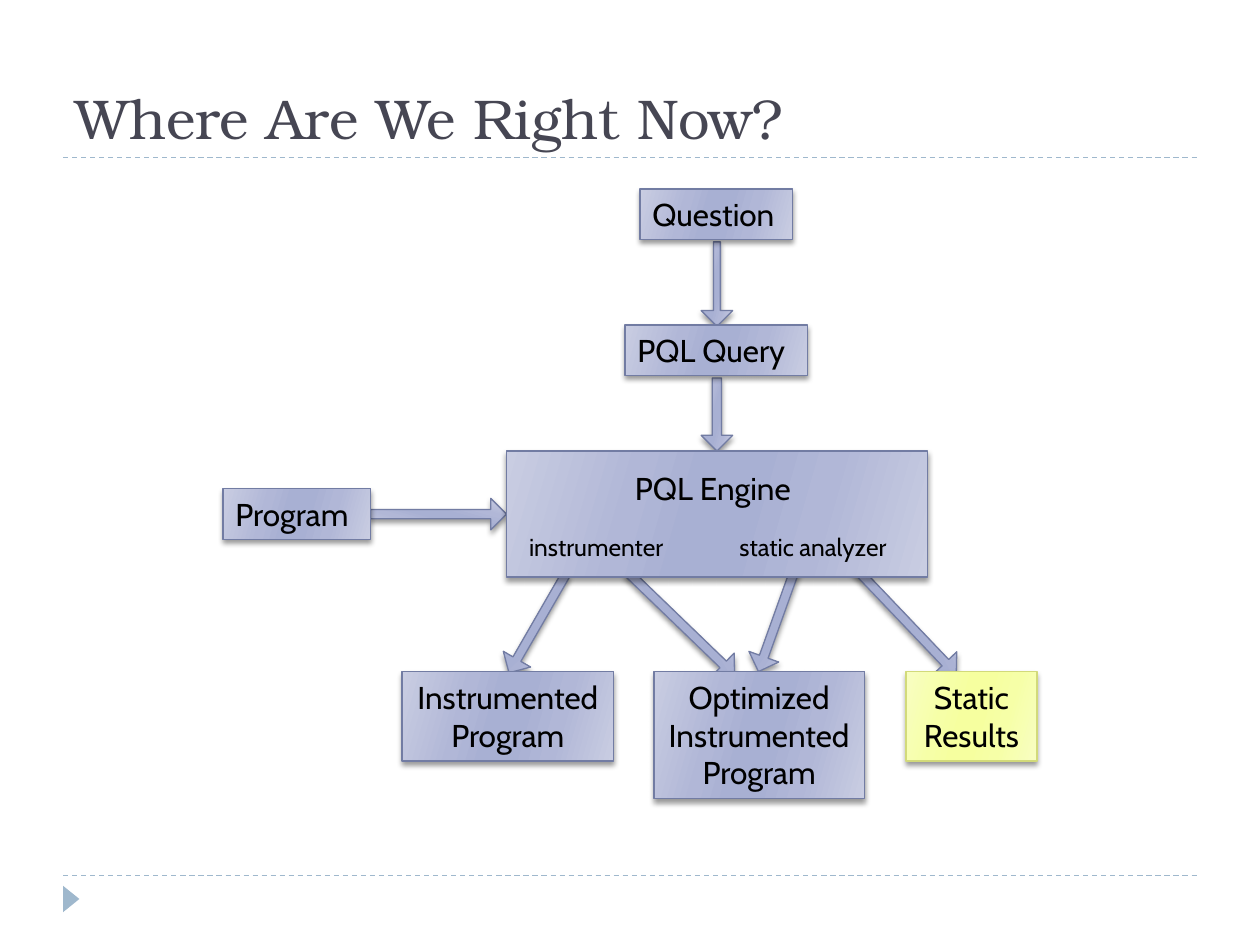
from math import atan2, degrees, hypot

from lxml.etree import SubElement
from pptx import Presentation
from pptx.dml.color import RGBColor
from pptx.enum.dml import MSO_LINE_DASH_STYLE as DASH
from pptx.enum.shapes import MSO_CONNECTOR, MSO_SHAPE
from pptx.enum.text import MSO_ANCHOR, PP_ALIGN
from pptx.oxml.ns import qn
from pptx.util import Inches, Pt

COLORS = {"title": "464653", "text": "000000", "accent": "9FB8CD", "shadow": "000000"}
BLUE = {"line": "727CA3", "edge": "C9CDE2", "mid": "B1B7D7", "core": "A8B0D3"}
YELLOW = {"line": "D2DA7A", "edge": "F8FEC2", "mid": "F6FFA7", "core": "F6FF9F"}
STOPS = [(0, "edge"), (30, "mid"), (45, "core"), (55, "core"), (73, "mid"), (100, "edge")]
TITLE_FONT, BODY_FONT = "TeX Gyre Bonum", "Cabin"
ARROW_W = 0.25


def rgb(value):
    """Turn a hex string into a colour."""
    return RGBColor.from_string(value)


def add_color(parent, value):
    """Add a hex colour element below an XML parent."""
    return SubElement(parent, qn("a:srgbClr"), val=value)


def style(sp, palette):
    """Give a shape the gradient, outline and soft shadow of a palette."""
    sp.fill.gradient()
    sp.fill.gradient_angle = 344
    stops = sp._element.spPr.find(".//" + qn("a:gsLst"))
    for stop in list(stops):
        stops.remove(stop)
    for pos, tone in STOPS:
        add_color(SubElement(stops, qn("a:gs"), pos=str(pos * 1000)), palette[tone])
    sp.line.color.rgb = rgb(palette["line"])
    sp.line.width = Pt(0.75)
    sp.shadow.inherit = False
    effects = sp._element.spPr.find(qn("a:effectLst"))
    shadow = SubElement(effects, qn("a:outerShdw"), blurRad=str(Pt(3)), dist=str(Pt(2)),
                        dir="5400000", rotWithShape="0")
    SubElement(add_color(shadow, COLORS["shadow"]), qn("a:alpha"), val="40000")


def write(sp, lines, size=18, align=PP_ALIGN.LEFT):
    """Write one paragraph for each line of text."""
    tf = sp.text_frame
    tf.word_wrap = False
    tf.vertical_anchor = MSO_ANCHOR.TOP
    for i, line in enumerate(lines):
        p = tf.add_paragraph() if i else tf.paragraphs[0]
        p.alignment = align
        r = p.add_run()
        r.text = line
        r.font.size = Pt(size)
        r.font.name = BODY_FONT
        r.font.color.rgb = rgb(COLORS["text"])


def add_box(slide, box, lines=(), palette=BLUE):
    """Add a gradient box, centring text of several lines."""
    sp = slide.shapes.add_shape(MSO_SHAPE.RECTANGLE, *map(Inches, box))
    style(sp, palette)
    write(sp, lines, align=PP_ALIGN.CENTER if len(lines) > 1 else PP_ALIGN.LEFT)


def add_label(slide, box, text, size):
    """Add a plain text label."""
    write(slide.shapes.add_textbox(*map(Inches, box)), [text], size)


def add_arrow(slide, tail, tip, shaft=0.29):
    """Add a block arrow running from tail to tip."""
    (x1, y1), (x2, y2) = tail, tip
    length = hypot(x2 - x1, y2 - y1)
    left, top = (x1 + x2 - ARROW_W) / 2, (y1 + y2 - length) / 2
    sp = slide.shapes.add_shape(MSO_SHAPE.DOWN_ARROW, Inches(left), Inches(top),
                                Inches(ARROW_W), Inches(length))
    sp.adjustments[0] = shaft
    sp.rotation = degrees(atan2(x1 - x2, y2 - y1)) % 360
    style(sp, BLUE)


def add_frame(slide, left, right, rules):
    """Add the dashed rules and the corner triangle."""
    for y in rules:
        rule = slide.shapes.add_connector(MSO_CONNECTOR.STRAIGHT, Inches(left), Inches(y),
                                          Inches(right), Inches(y))
        rule.line.color.rgb = rgb(COLORS["accent"])
        rule.line.width = Pt(0.75)
        rule.line.dash_style = DASH.DASH
        SubElement(rule._element.spPr, qn("a:effectLst"))
    marker = slide.shapes.add_shape(MSO_SHAPE.ISOSCELES_TRIANGLE, Inches(left - 0.04),
                                    Inches(rules[-1] + 0.12), Inches(0.21), Inches(0.13))
    marker.rotation = 90
    marker.fill.solid()
    marker.fill.fore_color.rgb = rgb(COLORS["accent"])
    marker.line.fill.background()
    marker.shadow.inherit = False


def add_title(slide, box, text):
    """Place and fill the title placeholder."""
    title = slide.shapes.title
    title.left, title.top, title.width, title.height = map(Inches, box)
    title.text_frame.vertical_anchor = MSO_ANCHOR.BOTTOM
    p = title.text_frame.paragraphs[0]
    p.alignment = PP_ALIGN.LEFT
    r = p.add_run()
    r.text = text
    r.font.size = Pt(32)
    r.font.name = TITLE_FONT
    r.font.color.rgb = rgb(COLORS["title"])


def add_inputs(slide, engine):
    """Add the boxes and arrows that lead into the engine."""
    left, top, width, height = engine
    mid_x, mid_y = left + width / 2, top + height / 2
    add_arrow(slide, (mid_x, 1.92), (mid_x, 2.59), shaft=0.22)
    add_arrow(slide, (mid_x, 3), (mid_x, top))
    add_arrow(slide, (2.94, mid_y), (left, mid_y))
    add_box(slide, (mid_x - 0.61, 1.5, 1.21, 0.4), ["Question"])
    add_box(slide, (mid_x - 0.73, 2.58, 1.45, 0.4), ["PQL Query"])
    add_box(slide, (1.77, mid_y - 0.2, 1.17, 0.4), ["Program"])


def add_engine(slide, box):
    """Add the engine box and the names of its parts."""
    left, top = box[:2]
    add_box(slide, box)
    add_label(slide, (left + 0.08, top + 0.59, 1.29, 0.34), "instrumenter", 14)
    add_label(slide, (left + 1.75, top + 0.59, 1.5, 0.34), "static analyzer", 14)
    add_label(slide, (left + 0.92, top + 0.09, 1.55, 0.4), "PQL Engine", 18)


def add_output_arrows(slide):
    """Add the arrows that fan out below the engine."""
    for tail, tip in [((4.49, 4.56), (4.04, 5.34)), ((6.78, 4.5), (7.59, 5.35)),
                      ((4.98, 4.54), (5.83, 5.36)), ((6.31, 4.52), (6.02, 5.33))]:
        add_arrow(slide, tail, tip)


def add_outputs(slide, top):
    """Add the row of result boxes."""
    add_box(slide, (3.19, top, 1.68, 0.71), ["Instrumented", "Program"])
    add_box(slide, (5.19, top, 1.67, 1.01), ["Optimized", "Instrumented", "Program"])
    add_box(slide, (7.19, top, 1.04, 0.71), ["Static", "Results"], YELLOW)


def main():
    """Build and save the slide."""
    prs = Presentation()
    prs.slide_width, prs.slide_height = Inches(10), Inches(7.5)
    slide = prs.slides.add_slide(prs.slide_layouts[5])
    engine = (4.02, 3.58, 3.34, 1)
    add_frame(slide, 0.5, 9.5, (1.25, 6.95))
    add_title(slide, (0.5, 0.17, 9, 1.08), "Where Are We Right Now?")
    add_inputs(slide, engine)
    add_output_arrows(slide)
    add_engine(slide, engine)
    add_outputs(slide, 5.33)
    prs.save("out.pptx")


if __name__ == "__main__":
    main()
